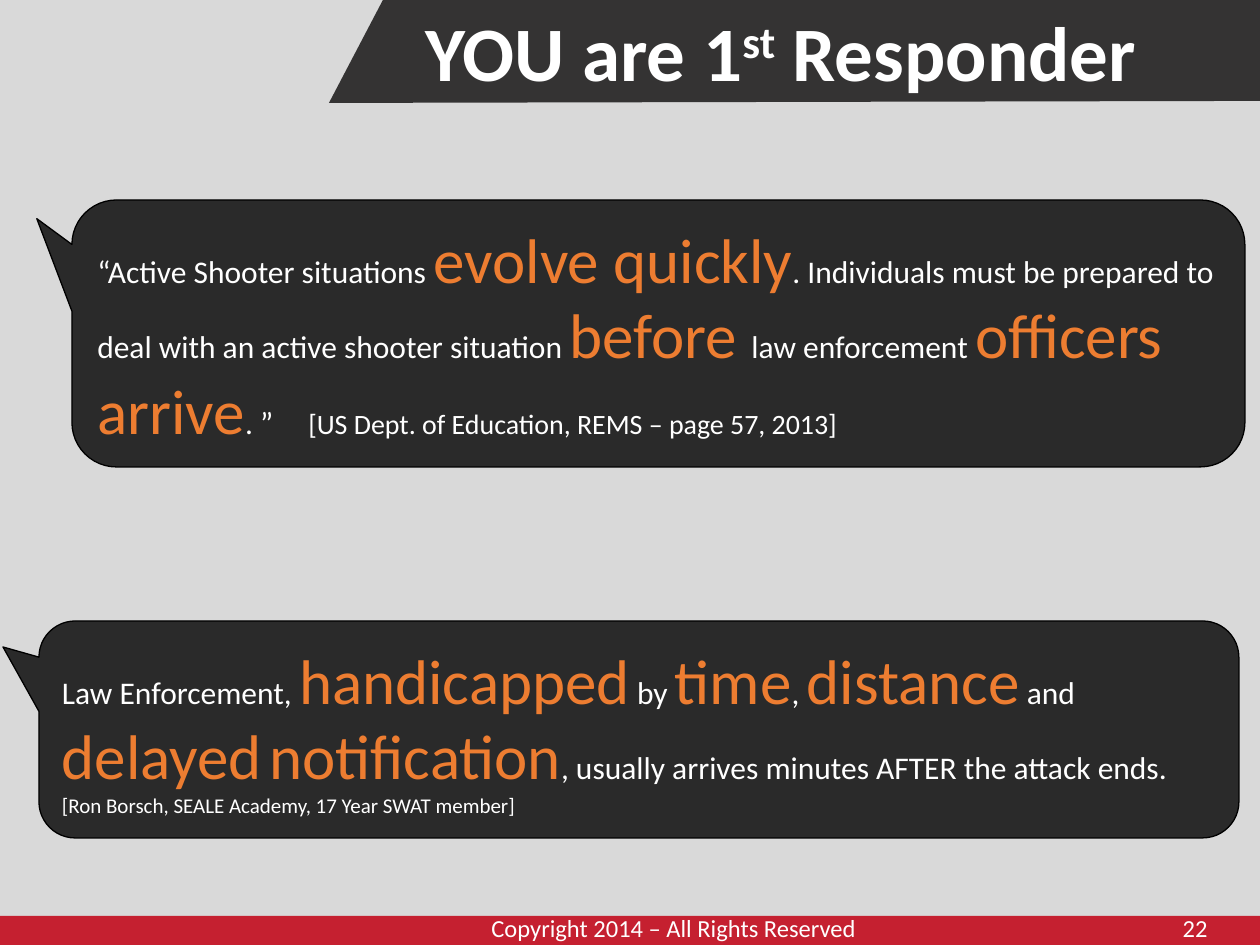
from dataclasses import dataclass

from lxml.etree import SubElement
from pptx import Presentation
from pptx.dml.color import RGBColor
from pptx.enum.shapes import MSO_SHAPE
from pptx.enum.text import MSO_ANCHOR, MSO_AUTO_SIZE, PP_ALIGN
from pptx.oxml.ns import qn
from pptx.util import Emu, Pt

EMU_PER_PX = 914400 / 126


def px(length):
    return Emu(round(length * EMU_PER_PX))


@dataclass(frozen=True)
class Theme:
    font: str = "Calibri"
    backdrop: str = "D9D9D9"
    dark: str = "181717"
    red: str = "C52030"
    white: str = "FFFFFF"
    orange: str = "ED7D31"
    outline: str = "000000"
    title: int = 44
    emphasis: int = 36
    body: int = 18
    source: int = 16
    footer: int = 14
    credit: int = 12


class SlideBuilder:
    def __init__(self, deck, theme):
        self.theme = theme
        self.page = deck.slides.add_slide(deck.slide_layouts[5])
        self.page.background.fill.solid()
        self.page.background.fill.fore_color.rgb = RGBColor.from_string(theme.backdrop)

    def paint(self, shape, color, opacity=100):
        shape.shadow.inherit = False
        shape.line.fill.background()
        shape.fill.solid()
        shape.fill.fore_color.rgb = RGBColor.from_string(color)
        if opacity < 100:
            tint = shape.fill._xPr.find(qn("a:solidFill"))[0]
            SubElement(tint, qn("a:alpha")).set("val", str(opacity * 1000))

    def span(self, para, text, size, color=None, bold=None, baseline=0):
        span = para.add_run()
        span.text = text
        span.font.name = self.theme.font
        span.font.size = Pt(size)
        span.font.bold = bold
        span.font.color.rgb = RGBColor.from_string(color or self.theme.white)
        if baseline:
            span._r.get_or_add_rPr().set("baseline", str(baseline * 1000))

    def bar(self, left, top, width, height):
        bar = self.page.shapes.add_shape(
            MSO_SHAPE.RECTANGLE, px(left), px(top), px(width), px(height))
        self.paint(bar, self.theme.red)

    def banner(self, corners):
        builder = self.page.shapes.build_freeform(*corners[0], scale=EMU_PER_PX)
        builder.add_line_segments(corners[1:], close=True)
        self.paint(builder.convert_to_shape(), self.theme.dark, 85)

    def title(self, left, top, width, height, parts):
        box = self.page.shapes.title
        box.left, box.top, box.width, box.height = map(px, (left, top, width, height))
        box.element.getparent().append(box.element)
        frame = box.text_frame
        frame.word_wrap = True
        frame.auto_size = MSO_AUTO_SIZE.NONE
        frame.vertical_anchor = MSO_ANCHOR.TOP
        para = frame.paragraphs[0]
        para.alignment = PP_ALIGN.LEFT
        para.line_spacing = 0.9
        for text, baseline in parts:
            self.span(para, text, self.theme.title, bold=True, baseline=baseline)

    def label(self, left, top, width, height, text,
              align=PP_ALIGN.LEFT, anchor=MSO_ANCHOR.TOP):
        box = self.page.shapes.add_textbox(px(left), px(top), px(width), px(height))
        frame = box.text_frame
        frame.word_wrap = True
        frame.vertical_anchor = anchor
        para = frame.paragraphs[0]
        para.alignment = align
        self.span(para, text, self.theme.footer)

    def callout(self, left, top, width, height, tail, phrases, source, size, tab=None):
        box = self.page.shapes.add_shape(
            MSO_SHAPE.ROUNDED_RECTANGULAR_CALLOUT,
            px(left), px(top), px(width), px(height))
        self.paint(box, self.theme.dark, 90)
        box.line.color.rgb = RGBColor.from_string(self.theme.outline)
        box.line.width = Pt(0.75)
        box.adjustments[0], box.adjustments[1] = tail
        frame = box.text_frame
        frame.word_wrap = True
        frame.auto_size = MSO_AUTO_SIZE.SHAPE_TO_FIT_TEXT
        frame.vertical_anchor = MSO_ANCHOR.MIDDLE
        para = frame.paragraphs[0]
        para.alignment = PP_ALIGN.LEFT
        if tab:
            stops = SubElement(para._p.get_or_add_pPr(), qn("a:tabLst"))
            stop = SubElement(stops, qn("a:tab"))
            stop.set("pos", str(px(tab)))
            stop.set("algn", "l")
        for index, phrase in enumerate(phrases):
            if index % 2:
                self.span(para, phrase, self.theme.emphasis, self.theme.orange)
            else:
                self.span(para, phrase, self.theme.body)
        if not tab:
            para.add_line_break()
        self.span(para, source, size)


def main():
    deck = Presentation()
    deck.slide_width, deck.slide_height = px(1260), px(945)
    theme = Theme()
    slide = SlideBuilder(deck, theme)

    slide.bar(0, 916, 1260, 29)
    slide.label(479, 907, 421, 43, "Copyright 2014 – All Rights Reserved")
    slide.banner([(383, 0), (1260, 0), (1260, 101), (329, 103)])
    slide.title(413, 9, 796, 103, [("YOU are 1", 0), ("st", 30), (" Responder", 0)])
    slide.label(1143, 916, 77, 23, "22", PP_ALIGN.RIGHT, MSO_ANCHOR.MIDDLE)

    slide.callout(
        72, 200, 1173, 267, (-0.53, -0.43),
        ["“Active Shooter situations ", "evolve quickly",
         ". Individuals must be prepared to deal with an active shooter situation ",
         "before ", "law enforcement ", "officers arrive", ". ”\t"],
        "[US Dept. of Education, REMS – page 57, 2013]", theme.source, tab=211)
    slide.callout(
        39, 621, 1200, 217, (-0.53, -0.38),
        ["Law Enforcement, ", "handicapped", " by ", "time", ", ", "distance", " and ",
         "delayed", " ", "notification",
         ", usually arrives minutes AFTER the attack ends."],
        "[Ron Borsch, SEALE Academy, 17 Year SWAT member]", theme.credit)

    deck.save("out.pptx")


if __name__ == "__main__":
    main()
